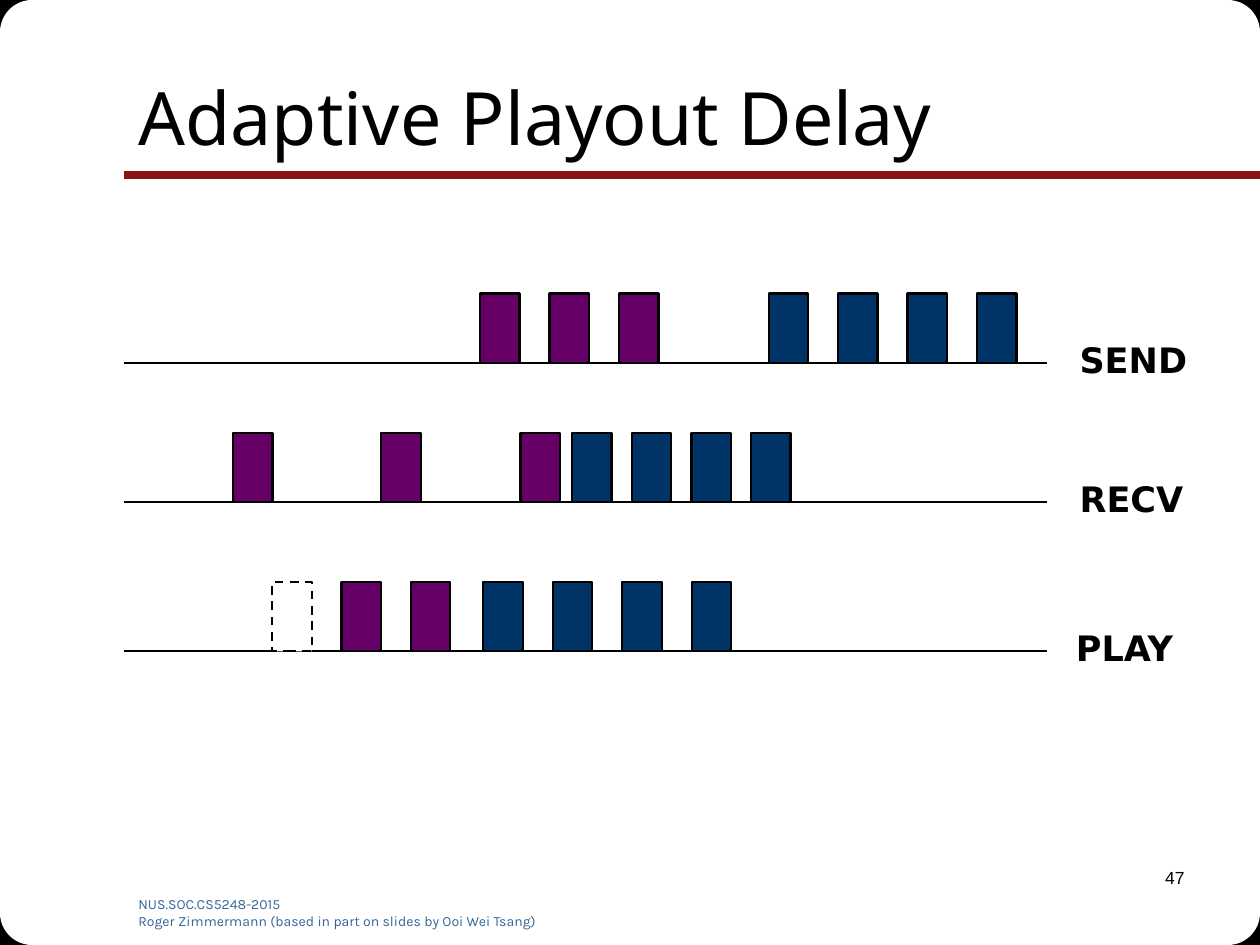
from lxml.etree import SubElement
from pptx import Presentation
from pptx.dml.color import RGBColor
from pptx.enum.dml import MSO_LINE_DASH_STYLE as Dash
from pptx.enum.shapes import MSO_CONNECTOR as Conn, MSO_SHAPE as Kind
from pptx.enum.text import MSO_ANCHOR as Anchor, PP_ALIGN as Align
from pptx.oxml.ns import qn
from pptx.util import Pt

# Content
TITLE = "Adaptive Playout Delay"
NOTES = ["NUS.SOC.CS5248-2015",
         "Roger Zimmermann (based in part on slides by Ooi Wei Tsang)"]
PAGE = "47"
BLACK, WHITE, RED = "000000", "FFFFFF", "891411"
PURPLE, BLUE, STEEL = "660066", "003366", "336699"
STEP, TIGHT = 39.7, 34.1


def train(start, count, gap=STEP):
    return [start + i * gap for i in range(count)]


# Label, label left, axis height, packets by colour
ROWS = [
    ("SEND", 609.8, 207.4, {PURPLE: train(274.3, 3), BLUE: train(439.2, 4)}),
    ("RECV", 609.8, 287, {PURPLE: [133.2, 217.9, 297.4],
                          BLUE: train(326.9, 4, TIGHT)}),
    ("PLAY", 607.7, 372.2, {WHITE: [155.5], PURPLE: train(195.1, 2),
                            BLUE: train(276.1, 4)}),
]
WIDE, HIGH = 720, 540
LEFT, RIGHT = 70.7, 598.3
BOX_W, BOX_H = 22.6, 39.7

deck = Presentation()
deck.slide_width, deck.slide_height = Pt(WIDE), Pt(HIGH)
slide = deck.slides.add_slide(deck.slide_layouts[5])
shapes = slide.shapes


def tint(code):
    return RGBColor.from_string(code)


def box(kind, x, y, w, h, fill, line=None):
    shape = shapes.add_shape(kind, Pt(x), Pt(y), Pt(w), Pt(h))
    shape.shadow.inherit = False
    shape.fill.solid()
    shape.fill.fore_color.rgb = tint(fill)
    if line:
        shape.line.color.rgb = tint(BLACK)
        shape.line.width = Pt(line)
    else:
        shape.line.fill.background()
    return shape


def rule(x1, x2, y, color, width):
    line = shapes.add_connector(Conn.STRAIGHT, Pt(x1), Pt(y), Pt(x2), Pt(y))
    line.line.color.rgb = tint(color)
    line.line.width = Pt(width)
    SubElement(line._element.spPr, qn("a:effectLst"))


def write(frame, lines, size, font, color, bold=False, align=Align.LEFT):
    for i, text in enumerate(lines):
        para = frame.add_paragraph() if i else frame.paragraphs[0]
        para.alignment = align
        run = para.add_run()
        run.text = text
        run.font.size, run.font.name, run.font.bold = Pt(size), font, bold
        run.font.color.rgb = tint(color)


def label(x, y, w, h):
    frame = shapes.add_textbox(Pt(x), Pt(y), Pt(w), Pt(h)).text_frame
    frame.word_wrap = True
    return frame


# Rounded black corners
for kind, side, fill, line in [(Kind.RECTANGLE, 31, BLACK, 0.75),
                               (Kind.ROUNDED_RECTANGLE, 110, WHITE, None)]:
    for x in (0, WIDE - side):
        for y in (0, HIGH - side):
            box(kind, x, y, side, side, fill, line)

# Title and its rule, in front of the corners
rule(LEFT, WIDE, 100, RED, 4.5)
head = shapes.title
shapes._spTree.append(head._element)
head.left, head.top, head.width, head.height = Pt(72), Pt(21.6), Pt(612), Pt(90)
head.text_frame.vertical_anchor = Anchor.MIDDLE
write(head.text_frame, [TITLE], 42, "Noto Sans", BLACK)

# Footer
write(label(72, 508.3, 246, 20), NOTES, 8, "Karla", STEEL)
write(label(534, 492, 150, 36), [PAGE], 10, "Arial", BLACK, align=Align.RIGHT)

# Timelines
for name, x, y, trains in ROWS:
    rule(LEFT, RIGHT, y, BLACK, 1.25)
    write(label(x, y - 17.6, 84, 31.5), [name], 20, "DejaVu Sans", BLACK, True)
    for color, spots in trains.items():
        for spot in spots:
            packet = box(Kind.RECTANGLE, spot, y - BOX_H, BOX_W, BOX_H,
                         color, 1.25)
            if color == WHITE:
                packet.line.dash_style = Dash.DASH

deck.save("out.pptx")
